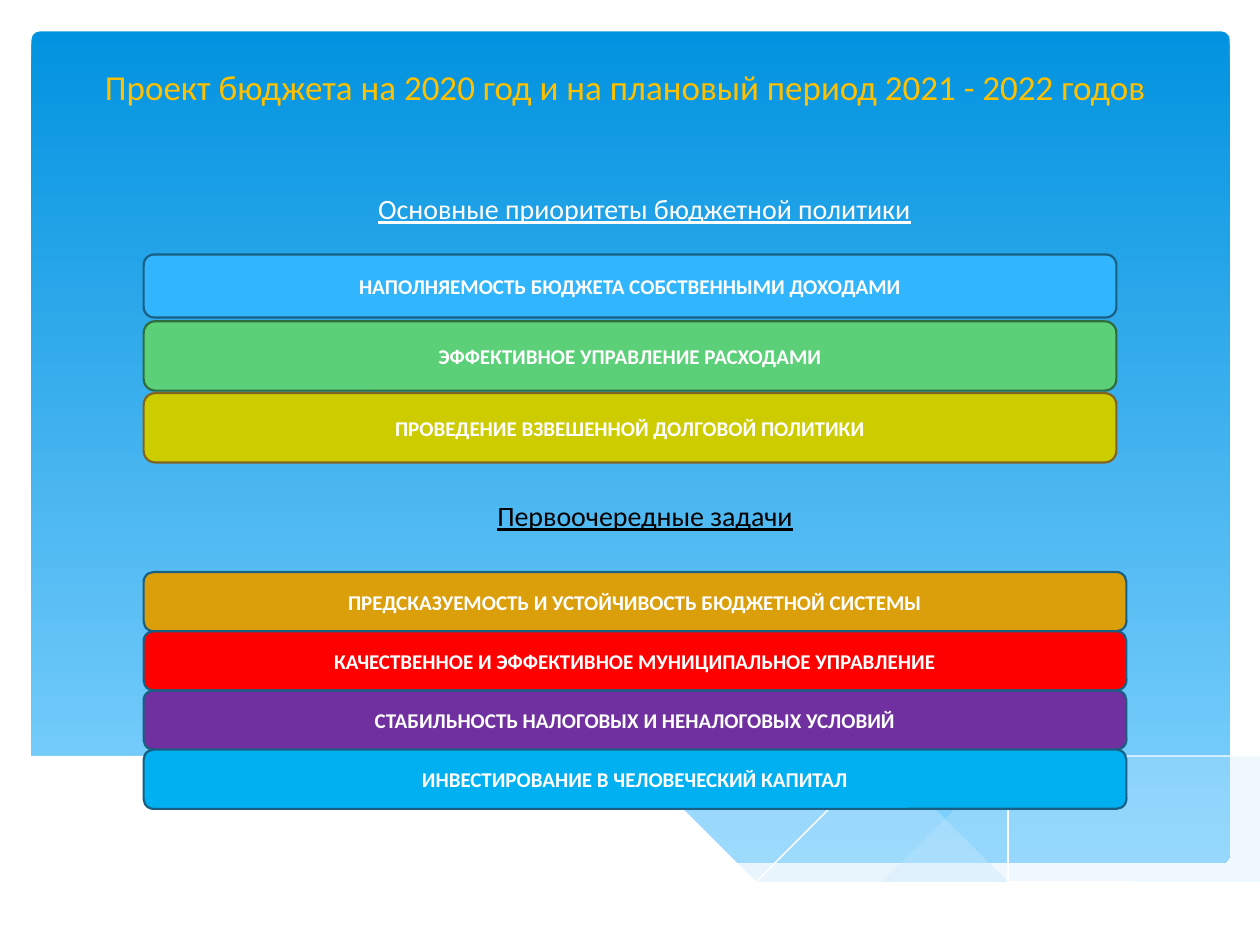
from pptx import Presentation
from pptx.dml.color import RGBColor
from pptx.enum.shapes import MSO_SHAPE as SHAPE
from pptx.enum.text import MSO_ANCHOR as ANCHOR, MSO_AUTO_SIZE as AUTO, PP_ALIGN as ALIGN
from pptx.oxml.ns import qn
from pptx.util import Inches, Pt
from lxml.etree import SubElement

HEADING = {"size": Pt(16), "name": "Calibri", "bold": False, "underline": True}
TITLE = {"size": Pt(20), "name": "Calibri", "bold": False}
BAR = {"size": Pt(12), "name": "Calibri", "bold": True}

PRIORITIES = [
    (2.02, 0.5, "31B6FD", "195F84", "НАПОЛНЯЕМОСТЬ БЮДЖЕТА СОБСТВЕННЫМИ ДОХОДАМИ"),
    (2.55, 0.55, "5BD078", "2F6D3F", "ЭФФЕКТИВНОЕ УПРАВЛЕНИЕ РАСХОДАМИ"),
    (3.12, 0.55, "CCCC00", "806421", "ПРОВЕДЕНИЕ ВЗВЕШЕННОЙ ДОЛГОВОЙ ПОЛИТИКИ"),
]
TASKS = [
    ("DC9F0C", "ПРЕДСКАЗУЕМОСТЬ И УСТОЙЧИВОСТЬ БЮДЖЕТНОЙ СИСТЕМЫ"),
    ("FF0000", "КАЧЕСТВЕННОЕ И ЭФФЕКТИВНОЕ МУНИЦИПАЛЬНОЕ УПРАВЛЕНИЕ"),
    ("7030A0", "СТАБИЛЬНОСТЬ НАЛОГОВЫХ И НЕНАЛОГОВЫХ УСЛОВИЙ"),
    ("00B0F0", "ИНВЕСТИРОВАНИЕ В ЧЕЛОВЕЧЕСКИЙ КАПИТАЛ"),
]

RIGHT_WAVE = [
    (9.77, 6.01), (9.5, 6.06), (9.22, 6.11), (8.92, 6.18), (8.62, 6.25), (8.06, 6.39),
    (7.54, 6.5), (7.07, 6.59), (6.62, 6.67), (6.92, 6.71), (7.33, 6.76), (7.7, 6.79),
    (8.15, 6.8), (8.55, 6.78), (8.9, 6.74), (9.22, 6.67), (9.51, 6.59), (9.77, 6.49),
]
LONG_WAVE = [
    (8.94, 6.75), (8.67, 6.71), (8.08, 6.62), (7.42, 6.49), (6.69, 6.33), (6.3, 6.24),
    (5.84, 6.13), (5.42, 6.04), (5.02, 5.98), (4.65, 5.93), (4.2, 5.89), (3.8, 5.87),
    (3.45, 5.88), (3.14, 5.9), (2.87, 5.93), (3.23, 5.98), (3.63, 6.04), (4.05, 6.13),
    (4.5, 6.24), (5.3, 6.42), (5.85, 6.54), (6.35, 6.63), (6.81, 6.7), (7.23, 6.76),
    (7.62, 6.79), (8.08, 6.8), (8.49, 6.79),
]
FALLING_CREST = [
    (3.1, 5.97), (3.36, 5.93), (3.63, 5.9), (4.02, 5.89), (4.51, 5.89), (4.89, 5.92),
    (5.33, 5.96), (5.82, 6.02), (6.37, 6.1), (6.96, 6.21), (7.61, 6.35), (8.32, 6.52),
    (9.08, 6.73),
]
RISING_CREST = [
    (6.14, 6.59), (6.53, 6.48), (6.96, 6.37), (7.49, 6.25), (8.07, 6.12), (8.67, 6),
    (8.97, 5.96), (9.25, 5.92), (9.52, 5.89), (9.76, 5.87),
]
WHITE_WAVE = [
    (9.77, 6.48), (9.5, 6.58), (9.2, 6.67), (8.87, 6.73), (8.5, 6.77), (8.09, 6.79),
    (7.61, 6.77), (7.08, 6.72), (6.48, 6.64), (5.79, 6.51), (5.03, 6.35), (4.47, 6.22),
    (3.91, 6.09), (3.4, 5.99), (2.92, 5.92), (2.5, 5.88), (2.11, 5.86), (1.77, 5.86),
    (1.46, 5.87), (1.19, 5.89), (0.95, 5.93), (0.76, 5.97), (0.59, 6.01), (0.46, 6.05),
    (0.36, 6.09), (0.23, 6.15), (0.23, 7.31), (9.77, 7.31),
]


def rgb(value):
    """Turn a hex string into a colour."""
    return RGBColor.from_string(value)


def inches(*values):
    """Turn numbers into lengths."""
    return [Inches(v) for v in values]


def write(sp, text, color, fmt, anchor):
    """Put one centred, formatted line of text in a shape."""
    tf = sp.text_frame
    for name, value in {"word_wrap": True, "auto_size": AUTO.NONE,
                        "vertical_anchor": anchor}.items():
        setattr(tf, name, value)
    p = tf.paragraphs[0]
    p.alignment = ALIGN.CENTER
    r = p.add_run()
    r.text = text
    for name, value in fmt.items():
        setattr(r.font, name, value)
    r.font.color.rgb = rgb(color)


def add_panel(s):
    """Draw the rounded gradient panel behind everything."""
    sp = s.shapes.add_shape(SHAPE.ROUNDED_RECTANGLE, *inches(0.25, 0.25, 9.51, 6.6))
    sp.adjustments[0] = 0.01
    sp.shadow.inherit = False
    sp.line.fill.background()
    sp.fill.gradient()
    sp.fill.gradient_angle = 270
    for stop, (position, color) in zip(sp.fill.gradient_stops, [(0, "0293E0"), (1, "83D3FE")]):
        stop.position = position
        stop.color.rgb = rgb(color)


def add_outline(s, points, close):
    """Draw a shadowless outline through points given in inches."""
    fb = s.shapes.build_freeform(*points[0], scale=Inches(1))
    fb.add_line_segments(points[1:], close=close)
    sp = fb.convert_to_shape()
    sp.shadow.inherit = False
    return sp


def add_wave(s, points, color, alpha=100):
    """Draw a filled wave with the given opacity in percent."""
    sp = add_outline(s, points, True)
    sp.line.fill.background()
    sp.fill.solid()
    sp.fill.fore_color.rgb = rgb(color)
    if alpha < 100:
        clr = sp.element.spPr.find(qn("a:solidFill"))[0]
        SubElement(clr, qn("a:alpha")).set("val", str(alpha * 1000))


def add_crest(s, points):
    """Draw a white hairline along a wave."""
    sp = add_outline(s, points, False)
    sp.fill.background()
    sp.line.color.rgb = rgb("FFFFFF")
    sp.line.width = Pt(0)


def place(sp, box, text, color, fmt, anchor):
    """Move a placeholder to the front, position it and fill it."""
    sp.element.getparent().append(sp.element)
    for name, value in zip(("left", "top", "width", "height"), inches(*box)):
        setattr(sp, name, value)
    write(sp, text, color, fmt, anchor)


def add_bar(s, box, fill, line, text):
    """Draw a rounded bar with a bold caption."""
    sp = s.shapes.add_shape(SHAPE.ROUNDED_RECTANGLE, *inches(*box))
    sp.shadow.inherit = False
    sp.fill.solid()
    sp.fill.fore_color.rgb = rgb(fill)
    sp.line.color.rgb = rgb(line)
    sp.line.width = Pt(1.25)
    write(sp, text, "FFFFFF", BAR, ANCHOR.MIDDLE)


def main():
    """Build the budget slide and save it."""
    prs = Presentation()
    prs.slide_width, prs.slide_height = inches(10, 7.5)
    s = prs.slides.add_slide(prs.slide_layouts[0])

    add_panel(s)
    add_wave(s, RIGHT_WAVE, "C6E7FC", 29)
    add_wave(s, LONG_WAVE, "C6E7FC", 40)
    add_crest(s, FALLING_CREST)
    add_crest(s, RISING_CREST)
    add_wave(s, WHITE_WAVE, "FFFFFF")

    place(s.shapes.title, (0.67, 0.52, 8.59, 0.38),
          "Проект бюджета на 2020 год и на плановый период 2021 - 2022 годов",
          "FFC000", TITLE, ANCHOR.BOTTOM)
    place(s.placeholders[1], (0.82, 1.47, 8.59, 0.38),
          "Основные приоритеты бюджетной политики", "FFFFFF", HEADING, ANCHOR.TOP)
    for top, height, fill, line, text in PRIORITIES:
        add_bar(s, (1.14, top, 7.72, height), fill, line, text)

    sp = s.shapes.add_textbox(*inches(2.01, 3.91, 6.22, 0.37))
    write(sp, "Первоочередные задачи", "000000", HEADING, ANCHOR.TOP)
    for i, (fill, text) in enumerate(TASKS):
        add_bar(s, (1.14, 4.54 + 0.47 * i, 7.8, 0.47), fill, "195F84", text)

    prs.save("out.pptx")


if __name__ == "__main__":
    main()
